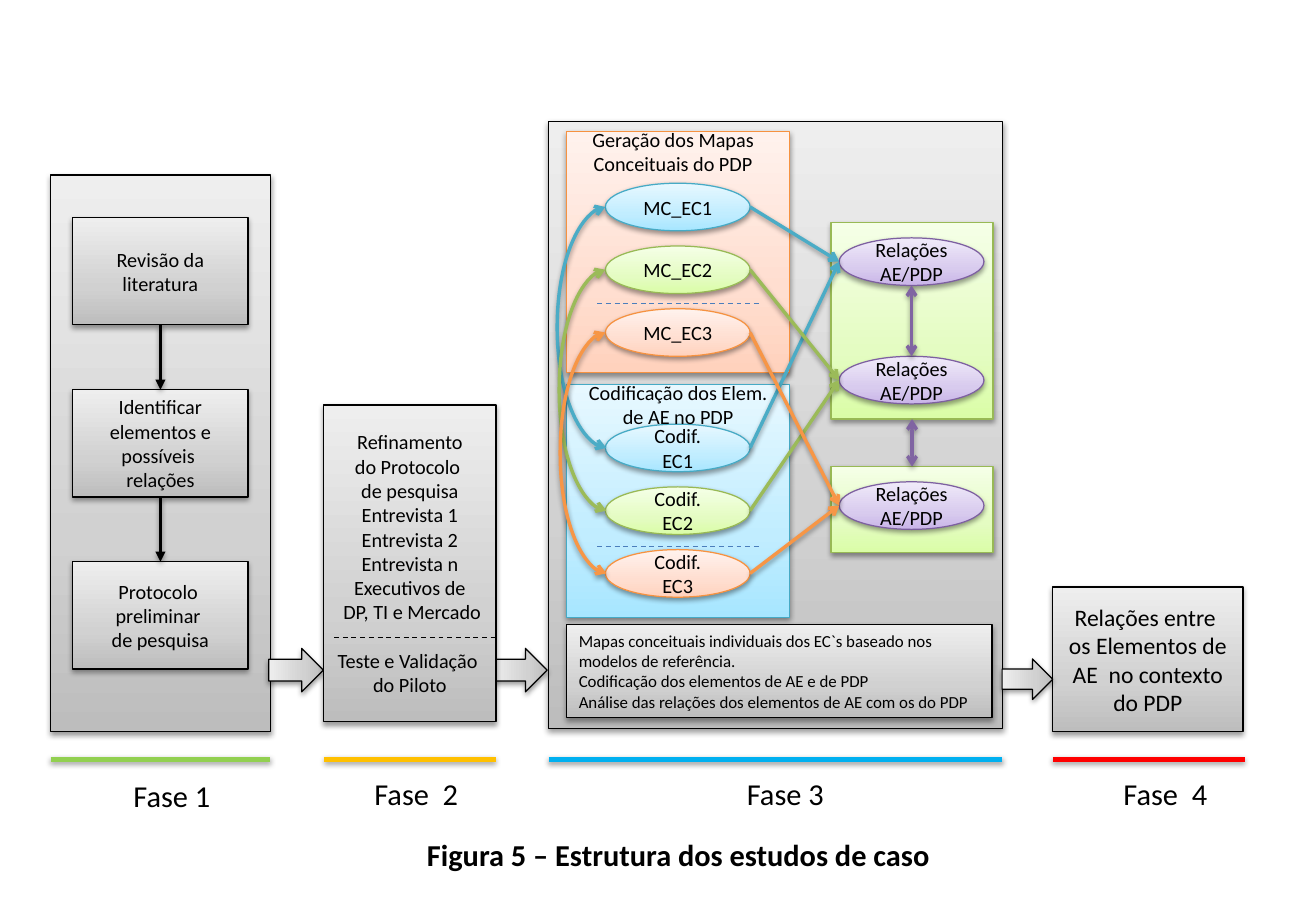
from lxml.etree import SubElement
from pptx import Presentation
from pptx.dml.color import RGBColor
from pptx.enum.dml import MSO_LINE_DASH_STYLE as Dash
from pptx.enum.shapes import MSO_CONNECTOR as Link, MSO_SHAPE as Kind
from pptx.enum.text import MSO_ANCHOR as Anchor, MSO_AUTO_SIZE as Fit, PP_ALIGN as Align
from pptx.oxml.ns import qn
from pptx.util import Inches, Pt

# Grid: 130 columns by 90 rows, twelve to the inch
COLUMNS, ROWS, PER_INCH = 130, 90, 12

BLACK = RGBColor(0x00, 0x00, 0x00)
LIME, AMBER = RGBColor(0x92, 0xD0, 0x50), RGBColor(0xFF, 0xC0, 0x00)
SKY, RED = RGBColor(0x00, 0xB0, 0xF0), RGBColor(0xFF, 0x00, 0x00)
TEAL, OLIVE = RGBColor(0x4B, 0xAC, 0xC6), RGBColor(0x9B, 0xBB, 0x59)
TANGERINE, VIOLET = RGBColor(0xF7, 0x96, 0x46), RGBColor(0x80, 0x64, 0xA2)
DIVIDER = RGBColor(0x4B, 0x7E, 0xBC)

# Theme: outline, then gradient from bottom to top
GREY = (BLACK, "BDBDBD", "D1D1D1", "EEEEEE")
GREEN = (RGBColor(0x98, 0xB9, 0x55), "DAFDA7", "E4FCC2", "F5FFE7")
ORANGE = (RGBColor(0xF6, 0x92, 0x40), "FFD2BD", "FFDED0", "FFF2ED")
BLUE = (RGBColor(0x46, 0xAA, 0xC5), "A7E6FF", "C1EDFF", "E7F8FF")
PURPLE = (RGBColor(0x7D, 0x60, 0xA0), "C9B5E8", "D8CBEE", "F0EAF9")

# Content: label, label place, bar start, bar end, bar colour
PHASES = [
    ("Fase 1", (12, 76.2), 5, 26.7, LIME),
    ("Fase  2", (35.8, 76), 32, 49, AMBER),
    ("Fase 3", (72.6, 76), 54.2, 99, SKY),
    ("Fase  4", (109.8, 76), 104, 123, RED),
]
STEPS = [
    "Revisão da\nliteratura",
    "Identificar\nelementos e\npossíveis \nrelações",
    "Protocolo \npreliminar \nde pesquisa",
]
REFINEMENT = ("Refinamento\ndo Protocolo \nde pesquisa\nEntrevista 1\nEntrevista 2\nEntrevista n\n"
              "Executivos de\n DP, TI e Mercado\nTeste e Validação \ndo Piloto")
ANALYSIS = ("Mapas conceituais individuais dos EC`s baseado nos modelos de referência.\n"
            "Codificação dos elementos de AE e de PDP\n"
            "Análise das relações dos elementos de AE com os do PDP")
OUTCOME = "Relações entre  os Elementos de AE  no contexto do PDP"
# Case: map, coding, relation, relation row, theme, link colour, curve depth
CASES = [
    ("MC_EC1", "Codif. EC1", "Relações\vAE/PDP", 23.5, BLUE, TEAL, 4.9),
    ("MC_EC2", "Codif. EC2", "Relações AE/PDP", 35.2, GREEN, OLIVE, 4.7),
    ("MC_EC3", "Codif. EC3", "Relações AE/PDP", 47.6, ORANGE, TANGERINE, 4.6),
]
HEADINGS = [
    ("Geração dos Mapas Conceituais do PDP", (56, 12, 21, 6)),
    ("Codificação dos Elem. de AE no PDP", (56, 37, 22, 6)),
]
CAPTION = "Figura 5 – Estrutura dos estudos de caso"
BLOCK_ARROWS = [(27.1, 63.5, 4.3, 5.4), (49.2, 63.5, 4.3, 5.4), (99.5, 64.6, 4, 5)]

deck = Presentation()
deck.slide_width, deck.slide_height = Inches(COLUMNS / PER_INCH), Inches(ROWS / PER_INCH)
slide = deck.slides.add_slide(deck.slide_layouts[6])


def grid(*cells):
    return [Inches(cell / PER_INCH) for cell in cells]


def cast_shadow(effects):
    shadow = SubElement(effects, qn("a:outerShdw"), blurRad="40000", dist="20000",
                        dir="5400000", rotWithShape="0")
    black = SubElement(shadow, qn("a:srgbClr"), val="000000")
    SubElement(black, qn("a:alpha"), val="38000")


def write(holder, text, size, align=Align.CENTER, wrap=True, bold=False):
    frame = holder.text_frame
    frame.text = text
    frame.word_wrap = wrap
    for paragraph in frame.paragraphs:
        paragraph.alignment = align
        for run in paragraph.runs:
            run.font.size, run.font.name, run.font.bold = Pt(size), "Calibri", bold
            run.font.color.rgb = BLACK
    return frame


def block(place, theme=GREY, kind=Kind.RECTANGLE):
    outline, *colours = theme
    shape = slide.shapes.add_shape(kind, *grid(*place))
    gradient = SubElement(shape._element.spPr, qn("a:gradFill"), rotWithShape="1")
    stops = SubElement(gradient, qn("a:gsLst"))
    for position, colour in zip(("0", "35000", "100000"), colours):
        stop = SubElement(stops, qn("a:gs"), pos=position)
        SubElement(stop, qn("a:srgbClr"), val=colour)
    SubElement(gradient, qn("a:lin"), ang="16200000", scaled="0")
    shape.line.color.rgb, shape.line.width = outline, Pt(0.75)
    shape.shadow.inherit = False
    cast_shadow(shape._element.spPr.find(qn("a:effectLst")))
    return shape


def label(place, text, size, **options):
    box = slide.shapes.add_textbox(*grid(*place))
    write(box, text, size, **options).auto_size = Fit.SHAPE_TO_FIT_TEXT


def line(start, end, colour, width=2, head=None, tail=None, dashed=False, kind=Link.STRAIGHT):
    link = slide.shapes.add_connector(kind, *grid(*start, *end))
    link.line.color.rgb, link.line.width = colour, Pt(width)
    if dashed:
        link.line.dash_style = Dash.DASH
    for tag, tip in (("a:headEnd", head), ("a:tailEnd", tail)):
        if tip:
            SubElement(link.line._ln, qn(tag), type=tip)
    effects = SubElement(link._element.spPr, qn("a:effectLst"))
    if not dashed:
        cast_shadow(effects)
    return link


def join(upper, lower, link):
    link.begin_connect(upper, 2)
    link.end_connect(lower, 0)


def curve(x, top, bottom, depth, colour):
    """Double arrow that bulges to the left between two ellipses."""
    breadth = 0.1
    link = line((x, top), (x + breadth, bottom), colour, head="arrow", tail="arrow", kind=Link.CURVE)
    properties = link._element.spPr
    properties.find(qn("a:xfrm")).set("rot", "10800000")
    guides = properties.find(qn("a:prstGeom")).find(qn("a:avLst"))
    SubElement(guides, qn("a:gd"), name="adj1", fmla=f"val {round(depth / breadth * 100000)}")


# Phase 4 and the frames of phases 1 and 3
write(block((104, 58, 18.8, 14.3)), OUTCOME, 14)
block((5, 17.3, 21.7, 55))
block((54.2, 12, 44.8, 60))

# Phase 1: steps from top to bottom
STEP_X, STEP_Y, STEP_W, STEP_H, STEP_PITCH = 7.2, 21.5, 17.3, 10.6, 17
previous = None
for row, text in enumerate(STEPS):
    step = block((STEP_X, STEP_Y + row * STEP_PITCH, STEP_W, STEP_H))
    write(step, text, 12, wrap=False)
    if previous:
        join(previous, step, line((0, 0), (1, 1), BLACK, tail="triangle"))
    previous = step

# Arrows between phases, bars and phase names
for place in BLOCK_ARROWS:
    block(place, kind=Kind.DOWN_ARROW).rotation = 270
for name, corner, start, end, colour in PHASES:
    line((start, 75), (end, 75), colour, 3)
    label((*corner, 16.2, 4.8), name, 18, align=Align.LEFT)

# Phase 3: notes and panels
notes = block((56, 61.7, 42, 9.2))
write(notes, ANALYSIS, 10, align=Align.LEFT).vertical_anchor = Anchor.TOP
lower_panel = block((82.1, 46.1, 16, 8.5), GREEN, Kind.FLOWCHART_PROCESS)
upper_panel = block((82.1, 22, 16, 19.4), GREEN, Kind.FLOWCHART_PROCESS)
block((56, 13, 22, 23.8), ORANGE, Kind.FLOWCHART_PROCESS)
block((56, 38, 22, 23), BLUE, Kind.FLOWCHART_PROCESS)

# Phase 3: one map, one coding and one relation per case
OVAL_W, OVAL_H, CASE_X, RELATION_X = 14.3, 4.7, 59.8, 82.9
MAP_Y, CODING_Y, CASE_PITCH = 18.1, 41.9, 6.2
for row, (concept, coding, relation, relation_y, theme, colour, depth) in enumerate(CASES):
    map_y, coding_y = (y + row * CASE_PITCH for y in (MAP_Y, CODING_Y))
    for text, x, y, look in ((concept, CASE_X, map_y, theme), (coding, CASE_X, coding_y, theme),
                             (relation, RELATION_X, relation_y, PURPLE)):
        write(block((x, y, OVAL_W, OVAL_H), look, Kind.OVAL), text, 12)
    middle = OVAL_H / 2
    curve(CASE_X, map_y + middle, coding_y + middle, depth, colour)
    for y in (map_y, coding_y):
        line((CASE_X + OVAL_W, y + middle), (RELATION_X, relation_y + middle), colour, tail="arrow")

# Phase 3: links between relations, dividers and headings
relation_middle = RELATION_X + OVAL_W / 2
line((relation_middle, CASES[1][3]), (relation_middle, CASES[0][3] + OVAL_H), VIOLET,
     head="arrow", tail="arrow")
join(upper_panel, lower_panel, line((0, 0), (1, 1), VIOLET, head="arrow", tail="arrow"))
for y in (54, 30):
    line((59, y), (75, y), DIVIDER, 0.75, dashed=True)
for text, place in HEADINGS:
    label(place, text, 12)

# Phase 2: refinement and pilot test
refinement = write(block((32, 40, 17, 31.3)), REFINEMENT, 12, wrap=False)
refinement.paragraphs[8].space_before = Pt(14.5)
line((33, 63), (49, 63), BLACK, 0.75, dashed=True)

# Caption
label((41, 82, 52.4, 4.8), CAPTION, 18, align=Align.LEFT, wrap=False, bold=True)

deck.save("out.pptx")
